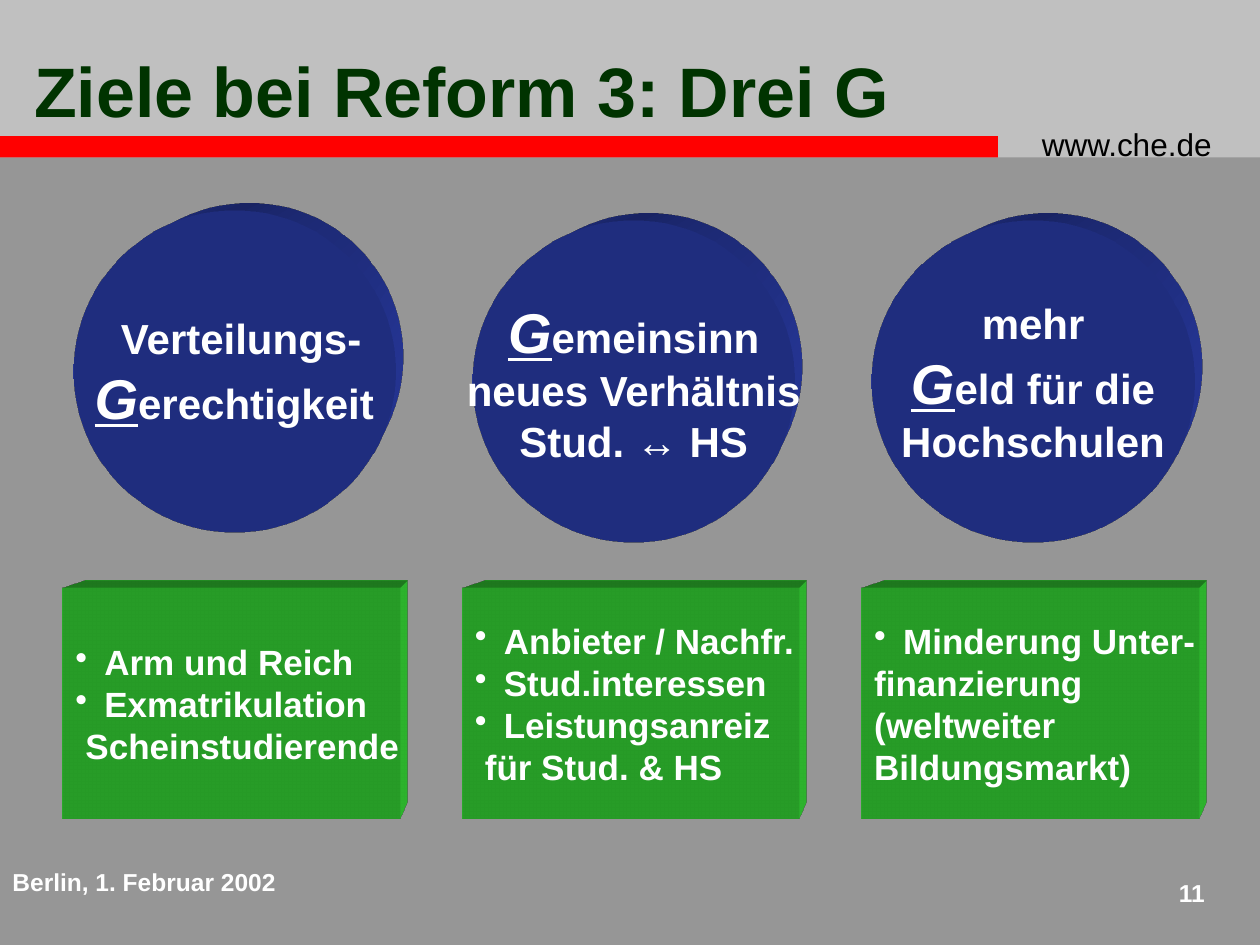
from dataclasses import dataclass

from lxml import etree
from pptx import Presentation
from pptx.dml.color import RGBColor
from pptx.enum.shapes import MSO_SHAPE
from pptx.enum.text import MSO_ANCHOR, PP_ALIGN
from pptx.oxml.ns import nsdecls, qn
from pptx.util import Inches, Pt

RECTANGLE, OVAL = MSO_SHAPE.RECTANGLE, MSO_SHAPE.OVAL
LEFT, CENTER, RIGHT = PP_ALIGN.LEFT, PP_ALIGN.CENTER, PP_ALIGN.RIGHT
TOP, MIDDLE = MSO_ANCHOR.TOP, MSO_ANCHOR.MIDDLE

FONT = "Arial"
COLORS = {
    "background": "969696",
    "header": "C0C0C0",
    "stripe": "FF0000",
    "title": "003300",
    "goal": "293BA5",
    "detail": "33CC33",
    "white": "FFFFFF",
    "black": "000000",
}
COLUMN_STEP = 3.17
BULLET_INDENT = 0.23


@dataclass
class Line:
    text: str
    indent: float = 0
    bullet: bool = False
    initial: str = ""


@dataclass
class Goal:
    top: float
    headline: list[Line]
    details: list[Line]


GOALS = [
    Goal(
        1.67,
        [Line("Verteilungs-", indent=0.11), Line("erechtigkeit", initial="G")],
        [Line("Arm und Reich", bullet=True), Line("Exmatrikulation", bullet=True),
         Line("Scheinstudierende", indent=0.08)],
    ),
    Goal(
        1.75,
        [Line("emeinsinn", initial="G"), Line("neues Verhältnis"), Line("Stud. ↔ HS")],
        [Line("Anbieter / Nachfr.", bullet=True), Line("Stud.interessen", bullet=True),
         Line("Leistungsanreiz", bullet=True), Line("für Stud. & HS", indent=0.08)],
    ),
    Goal(
        1.75,
        [Line("mehr"), Line("eld für die", initial="G"), Line("Hochschulen")],
        [Line("Minderung Unter-", bullet=True), Line("finanzierung \v(weltweiter"),
         Line("Bildungsmarkt)")],
    ),
]


def rgb(name: str) -> RGBColor:
    return RGBColor.from_string(COLORS[name])


def place(shape, left: float, top: float, width: float, height: float) -> None:
    shape.left, shape.top = Inches(left), Inches(top)
    shape.width, shape.height = Inches(width), Inches(height)


def format_font(font, size: float, color: str, bold: bool = True) -> None:
    font.name, font.size, font.bold = FONT, Pt(size), bold
    font.color.rgb = rgb(color)


def add_filled(slide, kind, left: float, top: float, width: float, height: float, color: str):
    shape = slide.shapes.add_shape(
        kind, Inches(left), Inches(top), Inches(width), Inches(height))
    shape.fill.solid()
    shape.fill.fore_color.rgb = rgb(color)
    shape.line.fill.background()
    shape.shadow.inherit = False
    return shape


def add_label(slide, text: str, left: float, top: float, width: float, height: float,
              size: float, color: str, bold: bool = True, alignment=LEFT) -> None:
    box = slide.shapes.add_textbox(Inches(left), Inches(top), Inches(width), Inches(height))
    box.text_frame.word_wrap = True
    paragraph = box.text_frame.paragraphs[0]
    paragraph.text = text
    paragraph.alignment = alignment
    format_font(paragraph.font, size, color, bold)


def extrude(shape, color: str) -> None:
    """Give a shape depth towards the upper right."""
    scene = (
        f'<a:scene3d {nsdecls("a")}><a:camera prst="legacyPerspectiveTopRight"/>'
        '<a:lightRig rig="legacyFlat3" dir="b"/></a:scene3d>'
    )
    depth = (
        f'<a:sp3d {nsdecls("a")} extrusionH="430200" prstMaterial="legacyMatte">'
        '<a:bevelT w="13500" h="13500" prst="angle"/>'
        '<a:bevelB w="13500" h="13500" prst="angle"/>'
        f'<a:extrusionClr><a:srgbClr val="{COLORS[color]}"/></a:extrusionClr></a:sp3d>'
    )
    properties = shape.element.spPr
    for xml in (scene, depth):
        properties.append(etree.fromstring(xml))


def write_lines(shape, lines: list[Line], size: float, alignment) -> None:
    frame = shape.text_frame
    frame.word_wrap = False
    frame.vertical_anchor = MIDDLE
    for index, line in enumerate(lines):
        paragraph = frame.add_paragraph() if index else frame.paragraphs[0]
        paragraph.alignment = alignment
        properties = paragraph._p.get_or_add_pPr()
        indent = BULLET_INDENT if line.bullet else line.indent
        properties.set("marL", str(Inches(indent)))
        properties.set("indent", str(-Inches(indent) if line.bullet else 0))
        if line.bullet:
            etree.SubElement(properties, qn("a:buChar")).set("char", "•")
        format_font(paragraph.font, size, "white")
        if line.initial:
            run = paragraph.add_run()
            run.text = line.initial
            run.font.size, run.font.italic, run.font.underline = Pt(32), True, True
            run = paragraph.add_run()
            run.text = line.text
        else:
            paragraph.text = line.text


def add_goal(slide, column: int, goal: Goal) -> None:
    offset = column * COLUMN_STEP
    circle = add_filled(slide, OVAL, 0.58 + offset, goal.top, 2.56, 2.56, "goal")
    extrude(circle, "goal")
    write_lines(circle, goal.headline, 24, CENTER)
    block = add_filled(slide, RECTANGLE, 0.5 + offset, 4.67, 2.67, 1.83, "detail")
    extrude(block, "detail")
    write_lines(block, goal.details, 20, LEFT)


def main() -> None:
    presentation = Presentation()
    presentation.slide_width, presentation.slide_height = Inches(10), Inches(7.5)
    slide = presentation.slides.add_slide(presentation.slide_layouts[5])
    slide.background.fill.solid()
    slide.background.fill.fore_color.rgb = rgb("background")

    # Header band, stripe and web address
    add_filled(slide, RECTANGLE, 0, 0, 10, 1.25, "header")
    add_filled(slide, RECTANGLE, -0.01, 1.08, 7.93, 0.17, "stripe")
    add_label(slide, "www.che.de", 8.17, 0.94, 1.75, 0.4, 18, "black", bold=False)

    # Title, brought in front of the header band
    title = slide.shapes.title
    slide.shapes._spTree.append(title.element)
    place(title, 0.17, 0.33, 7.67, 0.77)
    title.text_frame.vertical_anchor = TOP
    paragraph = title.text_frame.paragraphs[0]
    paragraph.text = "Ziele bei Reform 3: Drei G"
    paragraph.alignment = LEFT
    format_font(paragraph.font, 40, "title")

    # Three goals with their details
    for column, goal in enumerate(GOALS):
        add_goal(slide, column, goal)

    # Footer
    add_label(slide, "Berlin, 1. Februar 2002", 0, 6.83, 2.42, 0.5, 14, "white")
    add_label(slide, "11", 9.08, 6.92, 0.58, 0.42, 14, "white", alignment=RIGHT)

    presentation.save("out.pptx")


if __name__ == "__main__":
    main()
